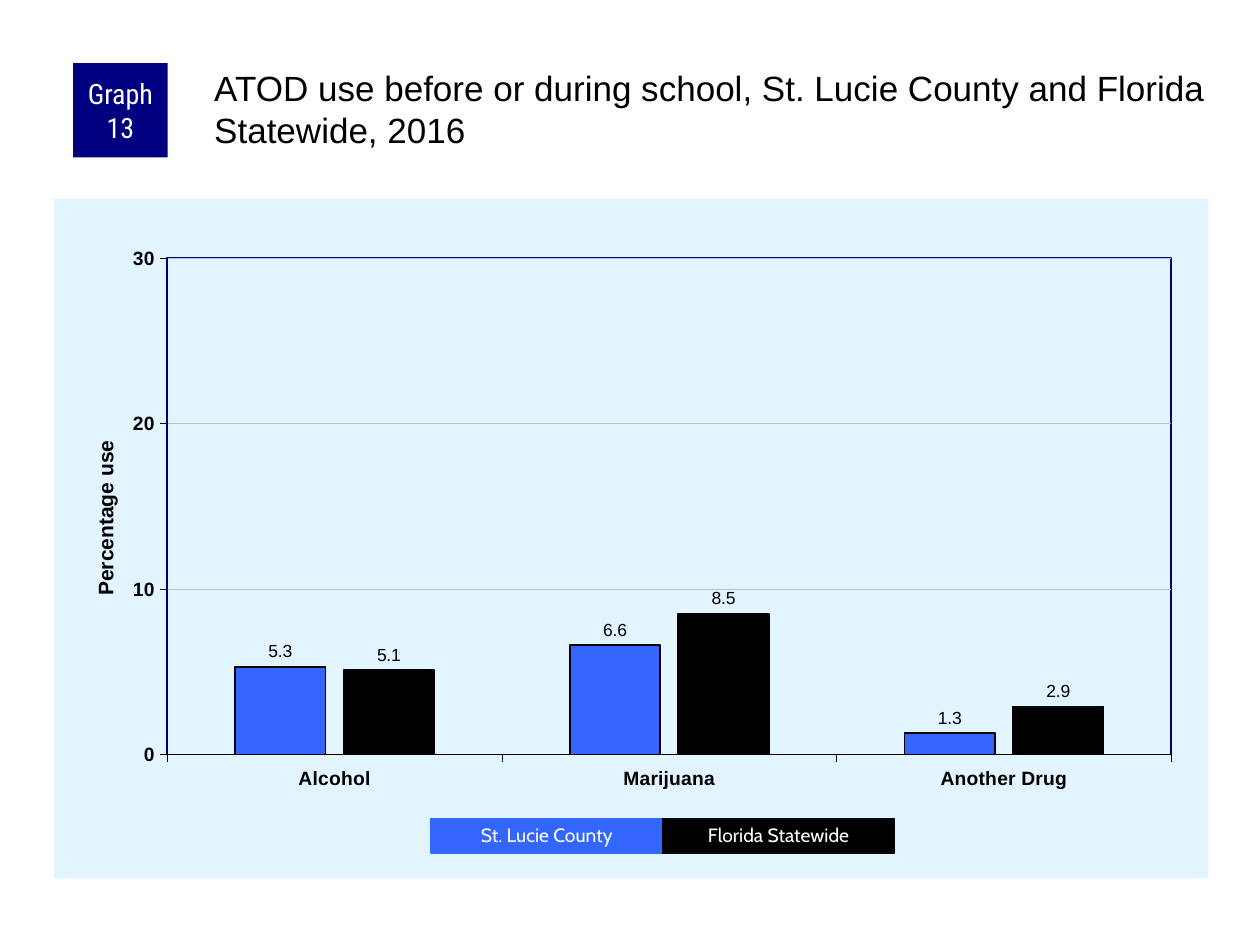
from lxml import etree
from pptx import Presentation
from pptx.chart.data import CategoryChartData
from pptx.dml.color import RGBColor
from pptx.enum.chart import XL_CHART_TYPE, XL_LABEL_POSITION, XL_TICK_MARK
from pptx.enum.shapes import MSO_SHAPE
from pptx.enum.text import MSO_ANCHOR, MSO_AUTO_SIZE, PP_ALIGN
from pptx.oxml import parse_xml
from pptx.oxml.ns import nsdecls, qn
from pptx.util import Inches, Pt

TITLE = "ATOD use before or during school, St. Lucie County and Florida Statewide, 2016"
BADGE = "Graph 13"
AXIS_TITLE = "Percentage use"
SUBSTANCES = ["Alcohol", "Marijuana", "Another Drug"]
REGIONS = [  # name, values, theme colour
    ("St. Lucie County", (5.3, 6.6, 1.3), "county"),
    ("Florida Statewide", (5.1, 8.5, 2.9), "state"),
]
THEME = {
    "color": {"county": "3366FF", "state": "000000", "navy": "000080", "panel": "E1F4FF",
              "grid": "C0C0C0", "ink": "000000", "paper": "FFFFFF"},
    "font": {"main": "Arial", "badge": "Roboto Condensed", "key": "Cabin"},
    "size": {"title": 20, "badge": 16, "axis_title": 12, "axis": 11, "key": 11,
             "chart": 11.5, "value": 10},
}
BADGE_BOX = (0.58, 0.5, 0.75, 0.75)
TITLE_BOX = (1.67, 0.5, 7.92, 0.83)
CHART_BOX = (0.43, 1.58, 9.16, 5.39)
KEY_LEFT, KEY_TOP, KEY_WIDTH, KEY_HEIGHT = 3.42, 6.5, 1.84, 0.27


def color(name):
    return RGBColor.from_string(THEME["color"][name])


def style_font(font, face, size, ink="ink", bold=False):
    font.name = THEME["font"][face]
    font.size = Pt(THEME["size"][size])
    font.color.rgb = color(ink)
    font.bold = bold


def style_line(line, ink, width):
    line.color.rgb = color(ink)
    line.width = Pt(width)


def set_insets(frame, left, top, right, bottom):
    frame.margin_left, frame.margin_top = Inches(left), Inches(top)
    frame.margin_right, frame.margin_bottom = Inches(right), Inches(bottom)


def add_run(paragraph, text, face, size, ink="ink", bold=False):
    run = paragraph.add_run()
    run.text = text
    style_font(run.font, face, size, ink, bold)


def add_tile(slide, box, fill, text, face, size):
    """Add a filled rectangle with one centred white line of text."""
    tile = slide.shapes.add_shape(MSO_SHAPE.RECTANGLE, *map(Inches, box))
    tile.shadow.inherit = False
    tile.fill.solid()
    tile.fill.fore_color.rgb = color(fill)
    tile.line.fill.background()
    frame = tile.text_frame
    frame.word_wrap = True
    frame.vertical_anchor = MSO_ANCHOR.MIDDLE
    frame.paragraphs[0].alignment = PP_ALIGN.CENTER
    add_run(frame.paragraphs[0], text, face, size, "paper")
    return tile


def place_manually(parent, index, target=None, **fractions):
    """Replace the automatic layout of a chart part with fixed fractions."""
    for old in parent.findall(qn("c:layout")):
        parent.remove(old)
    layout = parse_xml(f"<c:layout {nsdecls('c')}><c:manualLayout/></c:layout>")
    settings = {"layoutTarget": target} if target else {}
    settings |= {"xMode": "edge", "yMode": "edge"} | fractions
    for tag, value in settings.items():
        etree.SubElement(layout[0], qn(f"c:{tag}")).set("val", str(value))
    parent.insert(index, layout)


def area_format(fill="", line=""):
    def solid(name):
        return f'<a:solidFill><a:srgbClr val="{THEME["color"][name]}"/></a:solidFill>'
    inside = solid(fill) if fill else "<a:noFill/>"
    edge = solid(line) if line else "<a:noFill/>"
    return parse_xml(f'<c:spPr {nsdecls("c", "a")}>{inside}<a:ln w="{Pt(1)}">{edge}</a:ln></c:spPr>')


def add_title(slide):
    title = slide.shapes.title
    title.left, title.top, title.width, title.height = map(Inches, TITLE_BOX)
    frame = title.text_frame
    frame.word_wrap = True
    frame.auto_size = MSO_AUTO_SIZE.NONE
    frame.vertical_anchor = MSO_ANCHOR.TOP
    set_insets(frame, 0.03, 0.03, 0, 0)
    frame.paragraphs[0].alignment = PP_ALIGN.LEFT
    add_run(frame.paragraphs[0], TITLE, "main", "title")


def add_use_chart(slide):
    data = CategoryChartData(number_format="0.0")
    data.categories = SUBSTANCES
    for name, values, _ in REGIONS:
        data.add_series(name, values)
    chart = slide.shapes.add_chart(
        XL_CHART_TYPE.COLUMN_CLUSTERED, *map(Inches, CHART_BOX), data).chart
    chart.has_legend = False
    chart.has_title = False
    style_font(chart.font, "main", "chart")

    plot = chart.plots[0]
    plot.gap_width, plot.overlap, plot.vary_by_categories = 150, -20, False
    for series, (_, _, fill) in zip(plot.series, REGIONS):
        series.format.fill.solid()
        series.format.fill.fore_color.rgb = color(fill)
        style_line(series.format.line, "ink", 1)
        labels = series.data_labels
        labels.show_value = True
        labels.number_format, labels.number_format_is_linked = "0.0", False
        labels.position = XL_LABEL_POSITION.OUTSIDE_END
        style_font(labels.font, "main", "value")

    use_axis = chart.value_axis
    for axis in (chart.category_axis, use_axis):
        axis.major_tick_mark = XL_TICK_MARK.OUTSIDE
        axis.minor_tick_mark = XL_TICK_MARK.NONE
        style_font(axis.tick_labels.font, "main", "axis", bold=True)
        style_line(axis.format.line, "ink", 0.25)
    use_axis.minimum_scale, use_axis.maximum_scale, use_axis.major_unit = 0, 30, 10
    use_axis.tick_labels.number_format = "0"
    use_axis.tick_labels.number_format_is_linked = False
    style_line(use_axis.major_gridlines.format.line, "grid", 0.25)
    axis_title = use_axis.axis_title
    add_run(axis_title.text_frame.paragraphs[0], AXIS_TITLE, "main", "axis_title", bold=True)
    place_manually(axis_title._element, 1, x=0.03, y=0.35)

    chart_space = chart._chartSpace
    plot_area = chart_space.chart.plotArea
    place_manually(plot_area, 0, "inner", x=0.098, y=0.087, w=0.87, h=0.731)
    plot_area.append(area_format(line="navy"))
    chart_space.chart.addnext(area_format(fill="panel"))


def add_key(slide):
    for i, (name, _, fill) in enumerate(REGIONS):
        box = (KEY_LEFT + i * KEY_WIDTH, KEY_TOP, KEY_WIDTH, KEY_HEIGHT)
        tile = add_tile(slide, box, fill, name, "key", "key")
        style_line(tile.line, fill, 0.75)
        tile.text_frame.auto_size = MSO_AUTO_SIZE.SHAPE_TO_FIT_TEXT
        tile.text_frame.paragraphs[0].line_spacing = 0.9


def main():
    deck = Presentation()
    deck.slide_width, deck.slide_height = Inches(10), Inches(7.5)
    slide = deck.slides.add_slide(deck.slide_layouts[5])
    add_use_chart(slide)
    badge = add_tile(slide, BADGE_BOX, "navy", BADGE, "badge", "badge")
    set_insets(badge.text_frame, 0.05, 0, 0.05, 0)
    add_title(slide)
    add_key(slide)
    deck.save("out.pptx")


if __name__ == "__main__":
    main()
